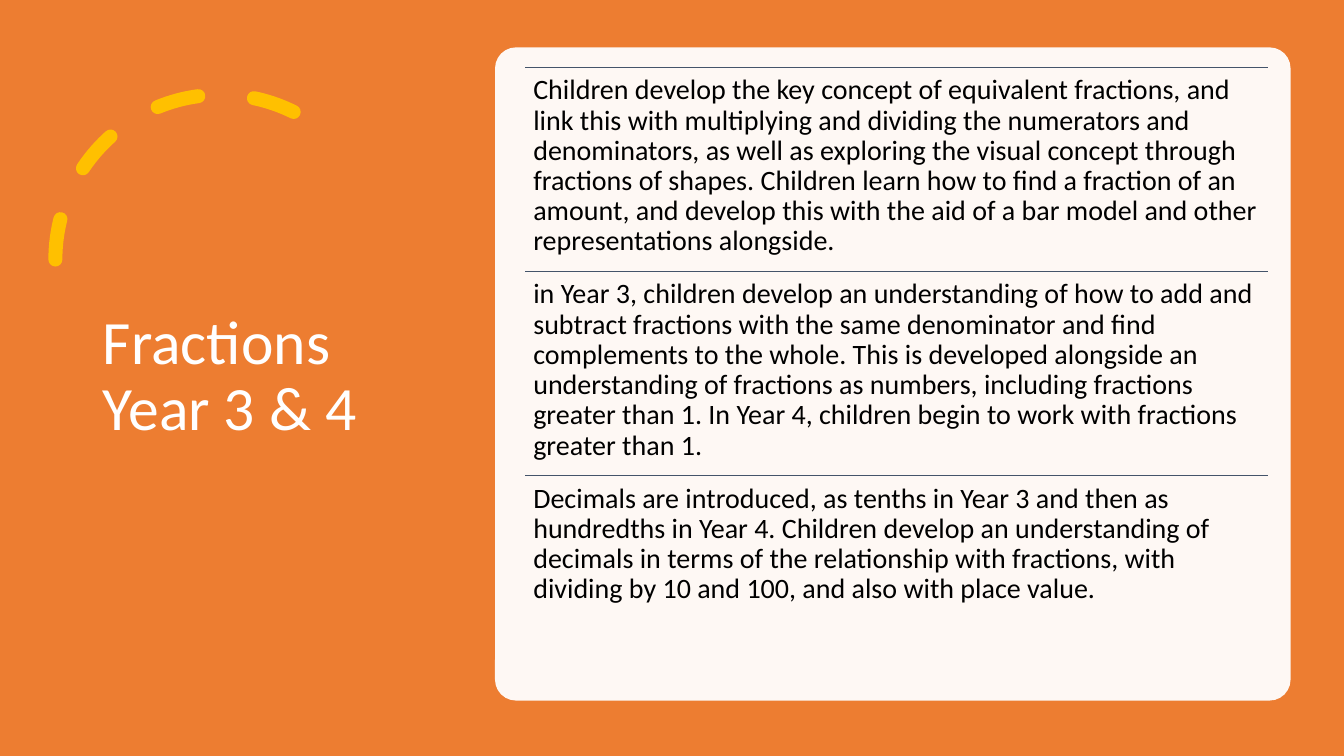
from lxml import etree
from pptx import Presentation
from pptx.dml.color import RGBColor
from pptx.enum.dml import MSO_LINE
from pptx.enum.shapes import MSO_CONNECTOR, MSO_SHAPE
from pptx.enum.text import MSO_ANCHOR, MSO_AUTO_SIZE, PP_ALIGN
from pptx.oxml.ns import qn
from pptx.util import Inches, Pt

RECTANGLE = MSO_SHAPE.RECTANGLE
ROUNDED = MSO_SHAPE.ROUNDED_RECTANGLE
ARC = MSO_SHAPE.ARC
STRAIGHT = MSO_CONNECTOR.STRAIGHT

ORANGE, GOLD, WHITE, SLATE, BLACK = "ED7D31", "FFC000", "FFFFFF", "44546A", "000000"
FONT = "Calibri"
ROW_LEFT, ROW_TOP = Inches(5.21), Inches(0.67)
ROW_WIDTH, ROW_HEIGHT = Inches(7.37), Inches(2.025)

TOPICS = [
    "Children develop the key concept of equivalent fractions, and link this with "
    "multiplying and dividing the numerators and denominators, as well as exploring the "
    "visual concept through fractions of shapes. Children learn how to find a fraction of "
    "an amount, and develop this with the aid of a bar model and other representations "
    "alongside.",
    "in Year 3, children develop an understanding of how to add and subtract fractions "
    "with the same denominator and find complements to the whole. This is developed "
    "alongside an understanding of fractions as numbers, including fractions greater than "
    "1. In Year 4, children begin to work with fractions greater than 1.",
    "Decimals are introduced, as tenths in Year 3 and then as hundredths in Year 4. "
    "Children develop an understanding of decimals in terms of the relationship with "
    "fractions, with dividing by 10 and 100, and also with place value.",
]


def color(hex_string):
    return RGBColor.from_string(hex_string)


def write(shape, text, size, hex_string):
    """Fill a shape with one left-aligned, wrapped paragraph."""
    frame = shape.text_frame
    frame.text = text
    frame.word_wrap = True
    frame.auto_size = MSO_AUTO_SIZE.NONE
    paragraph = frame.paragraphs[0]
    paragraph.alignment = PP_ALIGN.LEFT
    paragraph.line_spacing = 0.9
    font = paragraph.runs[0].font
    font.name, font.size = FONT, Pt(size)
    font.color.rgb = color(hex_string)


presentation = Presentation()
presentation.slide_width = Inches(13.33)
presentation.slide_height = Inches(7.5)
slide = presentation.slides.add_slide(presentation.slide_layouts.get_by_name("Title Only"))
shapes = slide.shapes

# Title
title = shapes.title
title.left, title.top = Inches(0.92), Inches(0.7)
title.width, title.height = Inches(3.23), Inches(6.09)
write(title, "Fractions Year 3 & 4", 44, WHITE)
title.text_frame.vertical_anchor = MSO_ANCHOR.MIDDLE

# Orange backdrop and dashed arc, both behind the title
backdrop = shapes.add_shape(
    RECTANGLE, 0, 0, presentation.slide_width, presentation.slide_height)
backdrop.shadow.inherit = False
backdrop.fill.solid()
backdrop.fill.fore_color.rgb = color(ORANGE)
backdrop.line.fill.background()

arc = shapes.add_shape(ARC, Inches(0.55), Inches(0.94), Inches(3.27), Inches(3.27))
arc.shadow.inherit = False
arc.adjustments[0] = 146.129
arc.adjustments[1] = 0
arc.fill.background()
arc.line.color.rgb = color(GOLD)
arc.line.width = Pt(10)
arc.line.dash_style = MSO_LINE.DASH
arc.element.spPr.find(qn("a:xfrm")).set("flipH", "1")
arc.element.spPr.find(qn("a:ln")).set("cap", "rnd")

for shape in (backdrop, arc):
    title.element.addprevious(shape.element)

# Translucent panel
panel = shapes.add_shape(ROUNDED, Inches(4.91), Inches(0.47), Inches(7.89), Inches(6.48))
panel.shadow.inherit = False
panel.adjustments[0] = 0.032
panel.fill.solid()
panel.fill.fore_color.rgb = color(WHITE)
panel.line.fill.background()
panel_color = panel.element.spPr.find(qn("a:solidFill")).find(qn("a:srgbClr"))
etree.SubElement(panel_color, qn("a:alpha")).set("val", "95000")

# Ruled rows, one for each topic
for index, topic in enumerate(TOPICS):
    top = ROW_TOP + index * ROW_HEIGHT
    rule = shapes.add_connector(STRAIGHT, ROW_LEFT, top, ROW_LEFT + ROW_WIDTH, top)
    rule.line.color.rgb = color(SLATE)
    rule.line.width = Pt(1)
    etree.SubElement(rule.element.spPr, qn("a:effectLst"))

    box = shapes.add_textbox(ROW_LEFT, top, ROW_WIDTH, ROW_HEIGHT)
    write(box, topic, 20, BLACK)
    frame = box.text_frame
    frame.margin_left = frame.margin_right = Inches(0.08)
    frame.margin_top = frame.margin_bottom = Inches(0.08)

presentation.save("out.pptx")
